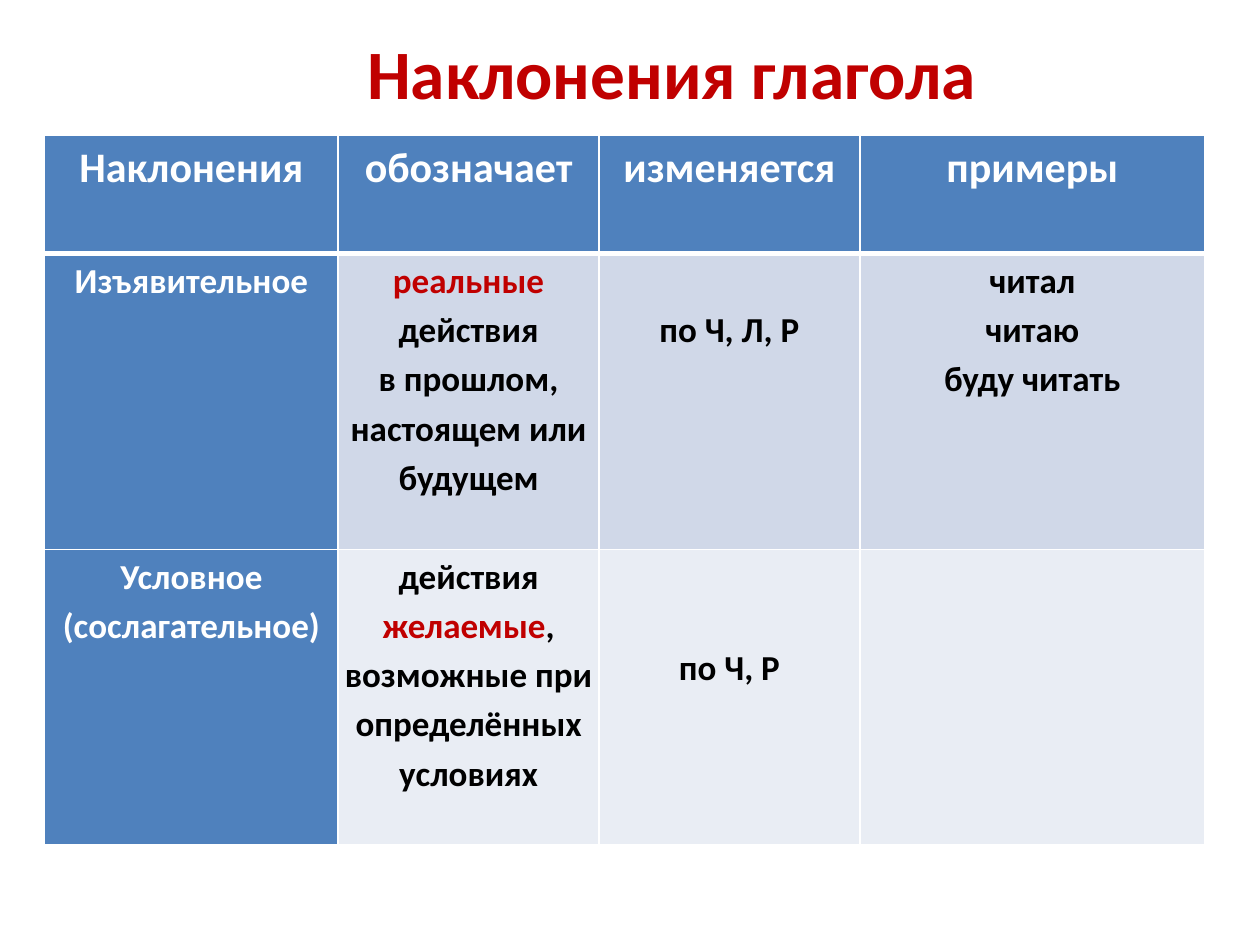
from dataclasses import dataclass

from lxml import etree
from pptx import Presentation
from pptx.dml.color import RGBColor
from pptx.enum import text
from pptx.oxml import ns
from pptx.util import Pt

COLORS = {
    "accent": "C00000",
    "header": "4F81BD",
    "band_dark": "D0D8E8",
    "band_light": "E9EDF4",
    "ink": "000000",
    "white": "FFFFFF",
}
FONT = "Calibri"
COLUMN_WIDTHS = (167.76, 149.04, 149.04, 197.28)
ROW_HEIGHTS = (67.5, 169, 169)


@dataclass(frozen=True)
class Entry:
    """One cell: its lines, an optional highlighted word and a top inset."""
    lines: tuple[str, ...] = ()
    highlight: str = ""
    top: float = 0


ENTRIES = (
    (Entry(("Наклонения",)), Entry(("обозначает",)),
     Entry(("изменяется",)), Entry(("примеры",))),
    (Entry(("Изъявительное",)),
     Entry(("реальные действия", "в прошлом, настоящем или будущем"), "реальные"),
     Entry(("по Ч, Л, Р",), top=28),
     Entry(("читал", "читаю", "буду читать"))),
    (Entry(("Условное", "(сослагательное)")),
     Entry(("действия желаемые, возможные при определённых условиях",), "желаемые"),
     Entry(("по Ч, Р",), top=52.5),
     Entry()),
)


def rgb(name: str) -> RGBColor:
    return RGBColor.from_string(COLORS[name])


def format_paragraph(paragraph, size: float, color: str) -> None:
    paragraph.alignment = text.PP_ALIGN.CENTER
    font = paragraph.font
    font.name, font.size, font.bold = FONT, Pt(size), True
    font.color.rgb = rgb(color)


def write_line(paragraph, line: str, highlight: str, color: str) -> None:
    if not highlight or highlight not in line:
        paragraph.add_run().text = line
        return
    before, after = line.split(highlight)
    for part, part_color in ((before, color), (highlight, "accent"), (after, color)):
        if part:
            run = paragraph.add_run()
            run.text = part
            run.font.color.rgb = rgb(part_color)


def draw_borders(cell, widths: dict[str, float]) -> None:
    properties = cell._tc.get_or_add_tcPr()
    for position, (side, width) in enumerate(widths.items()):
        line = etree.Element(ns.qn(f"a:ln{side}"), w=str(Pt(width)))
        fill = etree.SubElement(line, ns.qn("a:solidFill"))
        etree.SubElement(fill, ns.qn("a:srgbClr"), val=COLORS["white"])
        properties.insert(position, line)


def fill_cell(cell, entry: Entry, row: int, column: int) -> None:
    is_heading = row == 0 or column == 0
    background = "header" if is_heading else ("band_dark" if row == 1 else "band_light")
    color = "white" if is_heading else "ink"
    cell.fill.solid()
    cell.fill.fore_color.rgb = rgb(background)
    cell.margin_left = cell.margin_right = Pt(2.88)
    cell.margin_top, cell.margin_bottom = Pt(entry.top), Pt(0)
    draw_borders(cell, {"L": 1, "R": 1, "T": 3 if row == 1 else 1,
                        "B": 3 if row == 0 else 1})
    for index, line in enumerate(entry.lines):
        frame = cell.text_frame
        paragraph = frame.add_paragraph() if index else frame.paragraphs[0]
        format_paragraph(paragraph, 24 if row == 0 else 20, color)
        paragraph.line_spacing = 1.15
        write_line(paragraph, line, entry.highlight, color)


def main() -> None:
    deck = Presentation()
    deck.slide_width, deck.slide_height = Pt(720), Pt(540)
    slide = deck.slides.add_slide(deck.slide_layouts[5])

    # Title
    title = slide.shapes.title
    title.left, title.top, title.width, title.height = Pt(60), Pt(21), Pt(648), Pt(39.6)
    title.text_frame.text = "Наклонения глагола"
    title.text_frame.vertical_anchor = text.MSO_ANCHOR.MIDDLE
    format_paragraph(title.text_frame.paragraphs[0], 39.6, "accent")

    # Table of moods
    moods = slide.shapes.add_table(
        len(ROW_HEIGHTS), len(COLUMN_WIDTHS), Pt(25.5), Pt(77.4),
        Pt(sum(COLUMN_WIDTHS)), Pt(sum(ROW_HEIGHTS))).table
    for column, width in zip(moods.columns, COLUMN_WIDTHS):
        column.width = Pt(width)
    for row, height in zip(moods.rows, ROW_HEIGHTS):
        row.height = Pt(height)
    for r, entries in enumerate(ENTRIES):
        for c, entry in enumerate(entries):
            fill_cell(moods.cell(r, c), entry, r, c)

    deck.save("out.pptx")


if __name__ == "__main__":
    main()
